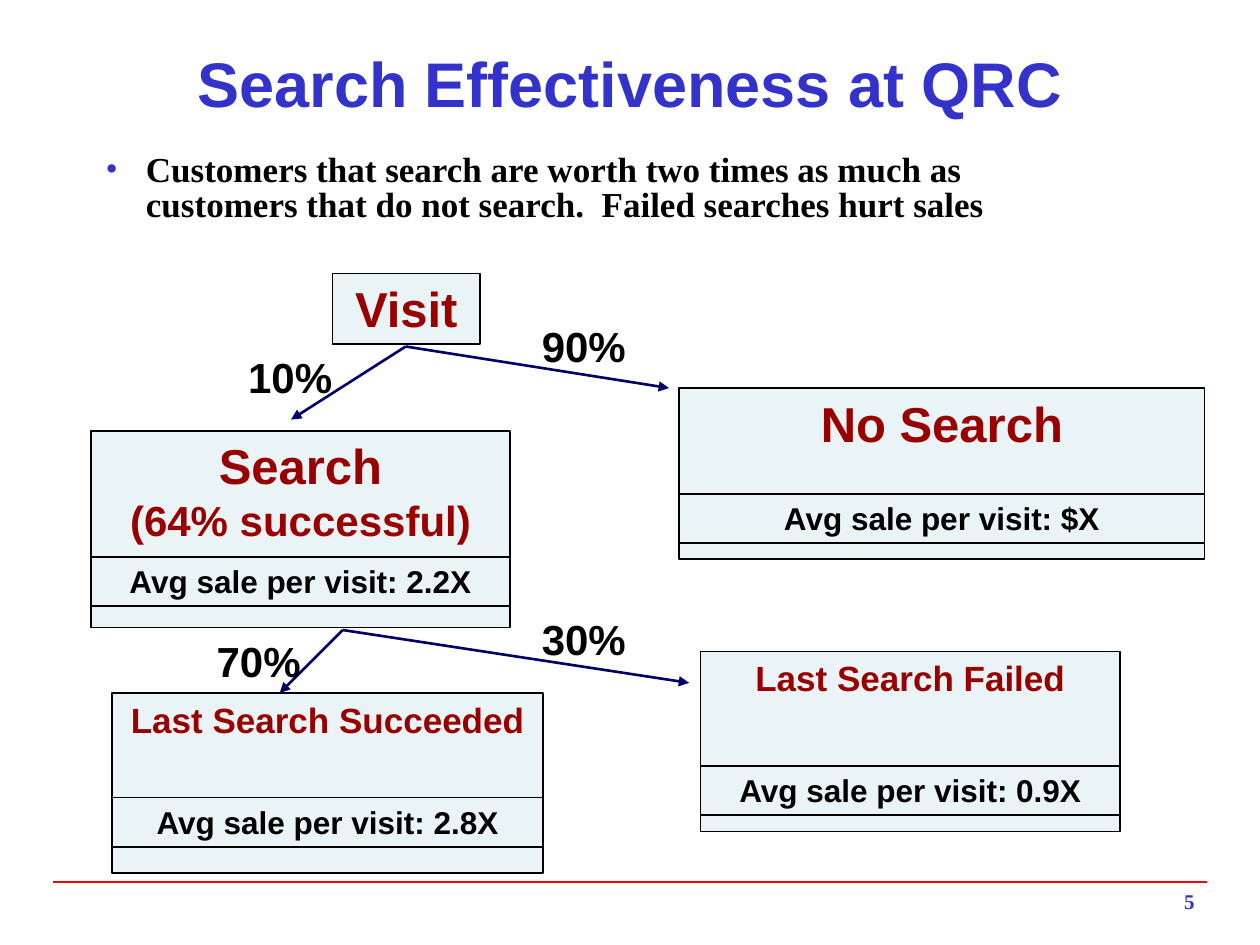
from pptx import Presentation
from pptx.dml.color import RGBColor
from pptx.enum import shapes, text
from pptx.oxml import parse_xml
from pptx.oxml.ns import nsdecls
from pptx.util import Inches, Pt

BLUE, RED, MAROON, NAVY, BLACK = "3333CC", "CC0000", "990000", "000066", "000000"
PALE = "EAF4F6"
LEFT, CENTER, RIGHT = text.PP_ALIGN.LEFT, text.PP_ALIGN.CENTER, text.PP_ALIGN.RIGHT
STRIP_HEIGHT = 0.39
TIGHT = (0.08, 0.04)

TITLE = "Search Effectiveness at QRC"
MESSAGE = [
    ("Customers that search are worth two times as much as customers that do not search.  ", 20, BLACK),
    ("Failed searches hurt sales", 20, RED),
]
STAGES = [
    ((2.64, 2.17, 1.17, 0.56), [("Visit", 28)], None, None),
    ((0.72, 3.42, 3.33, 1.56), [("Search\v", 28), ("(64% successful)", 24)], "2.2X", 4.42),
    ((5.39, 3.08, 4.17, 1.36), [("No Search", 28)], "$X", 3.92),
    ((0.89, 5.5, 3.42, 1.43), [("Last Search Succeeded", 20)], "2.8X", 6.33),
    ((5.56, 5.17, 3.33, 1.43), [("Last Search Failed", 20)], "0.9X", 6.08),
]
BRANCHES = [
    ((3.22, 2.75), (2.31, 3.33), "10%", (1.89, 2.75)),
    ((3.22, 2.75), (5.31, 3.08), "90%", (4.22, 2.5)),
    ((2.72, 5), (2.22, 5.5), "70%", (1.64, 5)),
    ((2.72, 5), (5.47, 5.42), "30%", (4.22, 4.83)),
]

prs = Presentation()
prs.slide_width, prs.slide_height = Inches(10), Inches(7.5)
slide = prs.slides.add_slide(prs.slide_layouts[6])


def color(value):
    return RGBColor.from_string(value)


def write(shape, runs, align, font="Arial", insets=TIGHT, anchor=text.MSO_ANCHOR.TOP):
    frame = shape.text_frame
    frame.word_wrap = True
    frame.vertical_anchor = anchor
    frame.margin_left = frame.margin_right = Inches(insets[0])
    frame.margin_top = frame.margin_bottom = Inches(insets[1])
    paragraph = frame.paragraphs[0]
    paragraph.text = "".join(words for words, _, _ in runs)
    paragraph.alignment = align
    for run, (_, size, tint) in zip(paragraph.runs, runs):
        run.font.name, run.font.size, run.font.bold = font, Pt(size), True
        run.font.color.rgb = color(tint)
    return paragraph


def label(box, runs, align, **style):
    return write(slide.shapes.add_textbox(*map(Inches, box)), runs, align, **style)


def panel(box, runs):
    shape = slide.shapes.add_shape(shapes.MSO_SHAPE.RECTANGLE, *map(Inches, box))
    shape.shadow.inherit = False
    shape.fill.solid()
    shape.fill.fore_color.rgb = color(PALE)
    shape.line.color.rgb = color(BLACK)
    shape.line.width = Pt(1)
    return write(shape, runs, CENTER)


def connect(start, end, tint, width, arrow=False):
    line = slide.shapes.add_connector(shapes.MSO_CONNECTOR.STRAIGHT, *map(Inches, start + end))
    line.line.color.rgb = color(tint)
    line.line.width = Pt(width)
    if arrow:
        line.line._get_or_add_ln().append(parse_xml(f'<a:tailEnd {nsdecls("a")} type="triangle"/>'))
    line._element.spPr.append(parse_xml(f'<a:effectLst {nsdecls("a")}/>'))


def add_bullet(paragraph, tint, indent):
    props = paragraph._p.get_or_add_pPr()
    props.set("marL", str(Inches(indent)))
    props.set("indent", str(-Inches(indent)))
    for xml in (
        f'<a:buClr {nsdecls("a")}><a:srgbClr val="{tint}"/></a:buClr>',
        f'<a:buFont {nsdecls("a")} typeface="Times New Roman"/>',
        f'<a:buChar {nsdecls("a")} char="•"/>',
    ):
        props.append(parse_xml(xml))


connect((0.42, 7), (9.58, 7), "FF0000", 1)
label((7.5, 7, 2.08, 0.33), [("5", 12, BLUE)], RIGHT, font="Times New Roman", insets=(0.1, 0.05))
label((0.5, 0.32, 9, 0.67), [(TITLE, 36, BLUE)], CENTER, insets=(0.1, 0.05),
      anchor=text.MSO_ANCHOR.MIDDLE)
message = label((0.74, 1.17, 8.17, 0.93), MESSAGE, LEFT, font="Times New Roman", insets=(0.1, 0.05))
message.line_spacing = 0.85
add_bullet(message, BLUE, 0.32)

for box, heading, sale, strip_top in STAGES:
    panel(box, [(words, size, MAROON) for words, size in heading])
    if sale:
        panel((box[0], strip_top, box[2], STRIP_HEIGHT), [(f"Avg sale per visit: {sale}", 18, BLACK)])

for start, end, share, corner in BRANCHES:
    connect(start, end, NAVY, 1.5, arrow=True)
    label(corner + (1.67, 0.48), [(share, 24, BLACK)], LEFT)

prs.save("out.pptx")
